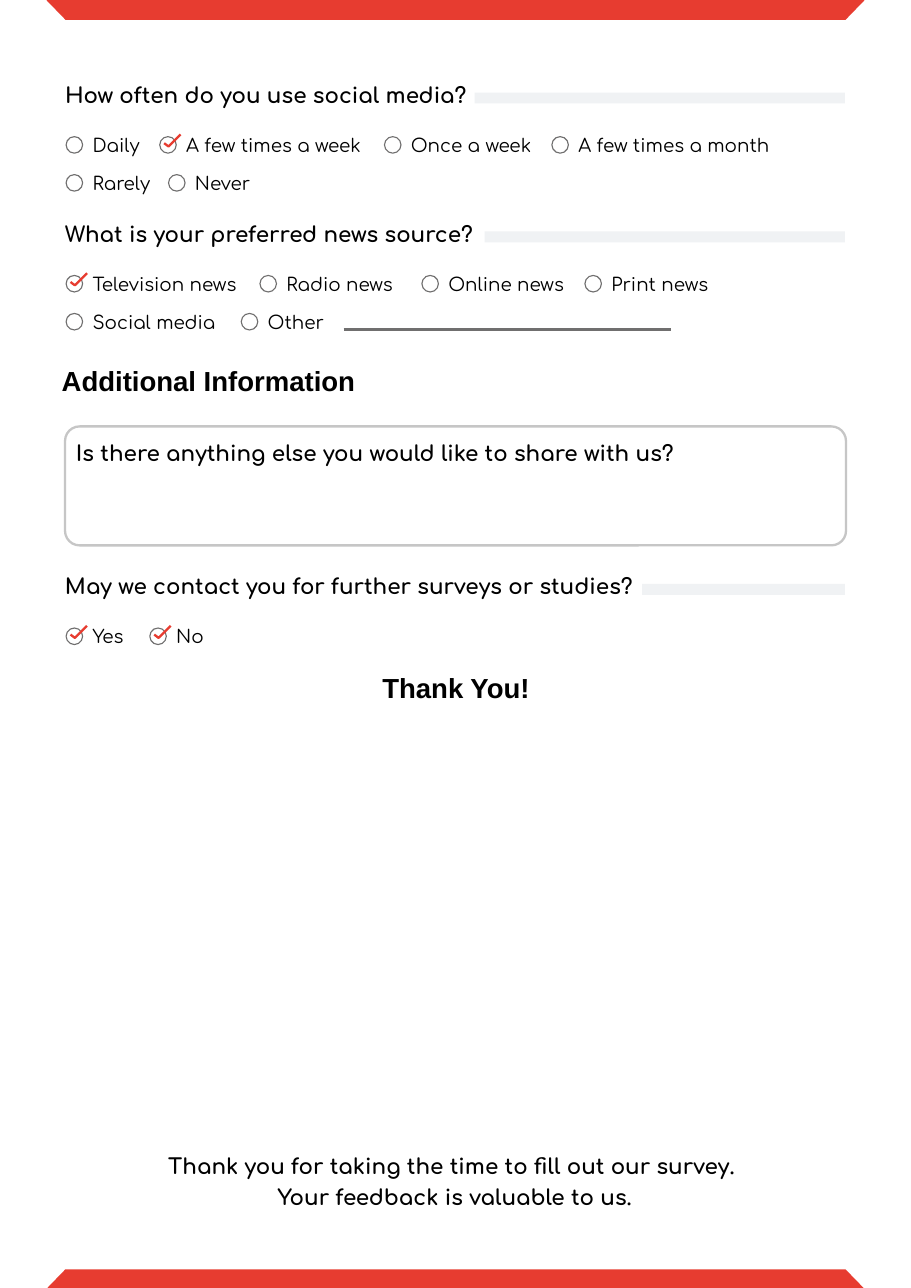
from pptx import Presentation
from pptx.dml.color import RGBColor
from pptx.enum.shapes import MSO_CONNECTOR, MSO_SHAPE
from pptx.enum.text import MSO_ANCHOR, MSO_AUTO_SIZE, PP_ALIGN
from pptx.oxml.xmlchemy import OxmlElement
from pptx.util import Inches, Pt

RED = RGBColor(0xE7, 0x3C, 0x30)
GREY = RGBColor(0x70, 0x6F, 0x6F)
SILVER = RGBColor(0xC6, 0xC6, 0xC6)
PALE = RGBColor(0xF0, 0xF2, 0xF4)
BLACK = RGBColor(0, 0, 0)

WIDE, HIGH = 8.27, 11.69
LEFT, RIGHT = 0.59, 7.67
ROW = 0.345

FRAME = dict(margin_left=0, margin_right=0, margin_top=0, margin_bottom=0,
             word_wrap=True, auto_size=MSO_AUTO_SIZE.NONE,
             vertical_anchor=MSO_ANCHOR.TOP)
HEAD = dict(name="Arial", size=Pt(18), bold=True)
ASK = dict(name="Comfortaa", size=Pt(14), bold=True)
PICK = dict(name="Comfortaa", size=Pt(12), bold=False)


def apply(item, values):
    for key, value in values.items():
        setattr(item, key, value)


def inch(*sizes):
    return [Inches(size) for size in sizes]


def write(shape, lines, font, align=PP_ALIGN.LEFT, space=0.9):
    frame = shape.text_frame
    apply(frame, FRAME)
    frame.text = "\n".join(lines)
    for para in frame.paragraphs:
        apply(para, dict(alignment=align, line_spacing=space))
        apply(para.font, font)
        para.font.color.rgb = BLACK


def label(shapes, box, lines, font, **form):
    write(shapes.add_textbox(*inch(*box)), lines, font, **form)


def paint(shape, fill=None, line=None, width=0.75):
    shape.shadow.inherit = False
    if fill is None:
        shape.fill.background()
    else:
        shape.fill.solid()
        shape.fill.fore_color.rgb = fill
    if line is None:
        shape.line.fill.background()
    else:
        shape.line.color.rgb = line
        shape.line.width = Pt(width)


def band(shapes, top, turn):
    shape = shapes.add_shape(MSO_SHAPE.TRAPEZOID, *inch(0.42, top, WIDE - 0.84, 0.18))
    shape.adjustments[0] = 0.97
    shape.rotation = turn
    paint(shape, RED)


def tick(shapes, left, top):
    spots = [inch(left + x, top + y) for x, y in ((0.19, -0.02), (0.08, 0.09), (0.04, 0.06))]
    pen = shapes.build_freeform(*spots[0])
    pen.add_line_segments(spots[1:], close=False)
    paint(pen.convert_to_shape(), line=RED, width=1.5)


def option(shapes, left, top, text, width, marked):
    paint(shapes.add_shape(MSO_SHAPE.OVAL, *inch(left, top, 0.15, 0.15)), line=GREY)
    label(shapes, (left + 0.24, top, width, 0.18), [text], PICK)
    if marked:
        tick(shapes, left, top)


def question(slide, top, text, split, rows):
    shapes = slide.shapes.add_group_shape().shapes
    label(shapes, (LEFT, top, split - LEFT, 0.21), [text], ASK)
    bar = shapes.add_shape(MSO_SHAPE.RECTANGLE, *inch(split, top + 0.07, RIGHT - split, 0.1))
    paint(bar, PALE)
    for i, row in enumerate(rows):
        for left, name, width, marked in row:
            option(shapes, left, top + 0.47 + i * ROW, name, width, marked)
    return shapes


def blank(shapes, left, top, width):
    rule = shapes.add_connector(MSO_CONNECTOR.STRAIGHT, *inch(left, top, left + width, top))
    rule.line.color.rgb = GREY
    rule.line.width = Pt(1.5)
    rule._element.spPr.append(OxmlElement("a:effectLst"))


def remark(slide, left, top, width, height):
    title = slide.shapes.title
    apply(title, dict(zip(("left", "top", "width", "height"),
                          inch(left - 0.03, top - 0.53, 3.28, 0.27))))
    write(title, ["Additional Information"], HEAD)
    shapes = slide.shapes.add_group_shape().shapes
    panel = shapes.add_shape(MSO_SHAPE.ROUNDED_RECTANGLE, *inch(left, top, width, height))
    panel.adjustments[0] = 0.123
    paint(panel, line=SILVER, width=1.5)
    label(shapes, (left + 0.1, top + 0.15, 6.4, 0.21),
          ["Is there anything else you would like to share with us?"], ASK)


def closing(shapes, top):
    label(shapes, (2.5, top, 3.28, 0.27), ["Thank You!"], HEAD, align=PP_ALIGN.CENTER)
    label(shapes, (0.93, top + 4.3, 6.4, 0.52),
          ["Thank you for taking the time to fill out our survey. ",
           "Your feedback is valuable to us."], ASK, align=PP_ALIGN.CENTER, space=1.2)


def main():
    deck = Presentation()
    apply(deck, dict(slide_width=Inches(WIDE), slide_height=Inches(HIGH)))
    slide = deck.slides.add_slide(deck.slide_layouts[5])
    band(slide.shapes, 0, 180)
    band(slide.shapes, HIGH - 0.17, 0)
    question(slide, 0.77, "How often do you use social media?", 4.31, [
        [(0.6, "Daily", 0.52, False), (1.45, "A few times a week", 1.67, True),
         (3.49, "Once a week", 1.22, False), (5.01, "A few times a month", 1.88, False)],
        [(0.6, "Rarely", 0.68, False), (1.53, "Never", 1.43, False)]])
    news = question(slide, 2.03, "What is your preferred news source?", 4.4, [
        [(0.6, "Television news", 1.43, True), (2.36, "Radio news", 1.13, False),
         (3.83, "Online news", 1.21, False), (5.31, "Print news", 1.21, False)],
        [(0.6, "Social media", 1.25, False), (2.19, "Other", 0.61, False)]])
    blank(news, 3.12, 2.99, 2.97)
    remark(slide, LEFT, 3.87, 7.09, 1.08)
    question(slide, 5.23, "May we contact you for further surveys or studies?", 5.83, [
        [(0.6, "Yes", 0.45, True), (1.36, "No", 0.4, True)]])
    closing(slide.shapes, 6.12)
    deck.save("out.pptx")


if __name__ == "__main__":
    main()
